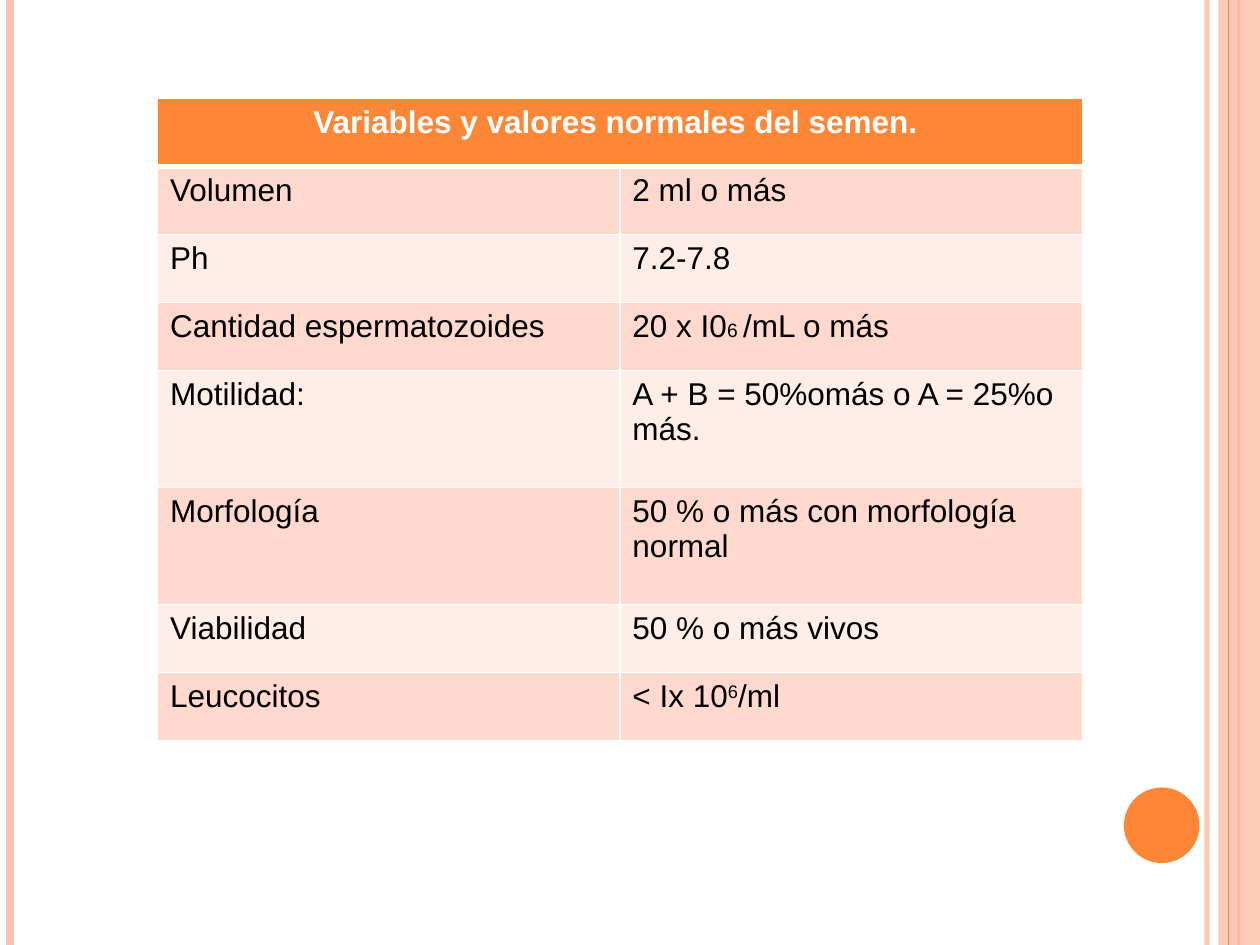
from lxml import etree
from pptx import Presentation
from pptx import util as u
from pptx.dml.color import RGBColor
from pptx.enum import shapes, text
from pptx.oxml import ns

COLORS = {
    "orange": "FE8637",
    "peach": "FEC3AE",
    "band_dark": "FFD9CE",
    "band_light": "FFEDE8",
    "white": "FFFFFF",
    "black": "000000",
}
SLIDE_HEIGHT = 7.5
TITLE = "Variables y valores normales del semen. "

# Each value is a list of (text, format) runs
ROWS = [
    ("Volumen", [("2 ml o más", {})]),
    ("Ph", [("7.2-7.8", {})]),
    ("Cantidad espermatozoides",
     [("20 x I0", {}), ("6 ", {"size": 11}), ("/mL o más", {})]),
    ("Motilidad:", [("A + B = 50%omás o A = 25%o más.", {})]),
    ("Morfología", [("50 % o más con morfología normal", {})]),
    ("Viabilidad", [("50 % o más vivos", {})]),
    ("Leucocitos", [("< Ix 10", {}), ("6", {"baseline": 30}), ("/ml", {})]),
]
TALL_ROWS = (4, 5)


def rgb(name):
    return RGBColor.from_string(COLORS[name])


def add_alpha(element, percent):
    color = element.find(".//" + ns.qn("a:srgbClr"))
    etree.SubElement(color, ns.qn("a:alpha"), val=str(percent * 1000))


def add_text(paragraph, content, size=18, color="black", bold=False, baseline=0):
    run = paragraph.add_run()
    run.text = content
    run.font.name = "Arial"
    run.font.size = u.Pt(size)
    run.font.bold = bold
    run.font.color.rgb = rgb(color)
    if baseline:
        run.font._element.set("baseline", str(baseline * 1000))


def add_vertical_line(slide, x, color, width, alpha=None):
    line = slide.shapes.add_connector(
        shapes.MSO_CONNECTOR.STRAIGHT,
        u.Inches(x), u.Inches(0), u.Inches(x), u.Inches(SLIDE_HEIGHT))
    line.line.color.rgb = rgb(color)
    line.line.width = u.Pt(width)
    properties = line._element.spPr
    if alpha:
        add_alpha(properties, alpha)
    etree.SubElement(properties, ns.qn("a:effectLst"))


def add_plain_shape(slide, kind, left, top, width, height, color, alpha=None):
    shape = slide.shapes.add_shape(
        kind, u.Inches(left), u.Inches(top), u.Inches(width), u.Inches(height))
    shape.shadow.inherit = False
    shape.fill.solid()
    shape.fill.fore_color.rgb = rgb(color)
    shape.line.fill.background()
    if alpha:
        add_alpha(shape._element.spPr, alpha)


def style_cell(cell, color, top=1, bottom=1):
    cell.fill.solid()
    cell.fill.fore_color.rgb = rgb(color)
    properties = cell._tc.get_or_add_tcPr()
    borders = (("L", 1), ("R", 1), ("T", top), ("B", bottom))
    for index, (side, width) in enumerate(borders):
        border = etree.Element(ns.qn(f"a:ln{side}"), w=str(u.Pt(width)))
        fill = etree.SubElement(border, ns.qn("a:solidFill"))
        etree.SubElement(fill, ns.qn("a:srgbClr"), val=COLORS["white"])
        properties.insert(index, border)


def add_values_table(slide):
    table = slide.shapes.add_table(
        len(ROWS) + 1, 2, u.Inches(1.25), u.Inches(0.78),
        u.Inches(7.34), u.Inches(5.08)).table
    for index, row in enumerate(table.rows):
        row.height = u.Inches(0.93 if index in TALL_ROWS else 0.54)

    # Header across both columns
    header = table.cell(0, 0)
    header.merge(table.cell(0, 1))
    for cell in table.rows[0].cells:
        style_cell(cell, "orange", bottom=3)
    paragraph = header.text_frame.paragraphs[0]
    paragraph.alignment = text.PP_ALIGN.CENTER
    add_text(paragraph, TITLE, color="white", bold=True)

    # Banded body rows
    for index, (variable, value) in enumerate(ROWS, start=1):
        band = "band_dark" if index % 2 else "band_light"
        for column, runs in enumerate(([(variable, {})], value)):
            cell = table.cell(index, column)
            style_cell(cell, band, top=3 if index == 1 else 1)
            for content, style in runs:
                add_text(cell.text_frame.paragraphs[0], content, **style)


def main():
    presentation = Presentation()
    presentation.slide_width = u.Inches(10)
    presentation.slide_height = u.Inches(SLIDE_HEIGHT)
    slide = presentation.slides.add_slide(presentation.slide_layouts[6])

    # Side stripes and circle
    add_vertical_line(slide, 9.58, "peach", 3, alpha=93)
    add_vertical_line(slide, 0.08, "peach", 4.5)
    add_vertical_line(slide, 9.83, "orange", 1.5)
    add_plain_shape(slide, shapes.MSO_SHAPE.RECTANGLE,
                    9.67, 0, 0.33, SLIDE_HEIGHT, "peach", alpha=87)
    add_vertical_line(slide, 9.75, "orange", 0.75)
    add_plain_shape(slide, shapes.MSO_SHAPE.OVAL, 8.92, 6.25, 0.6, 0.6, "orange")

    add_values_table(slide)
    presentation.save("out.pptx")


if __name__ == "__main__":
    main()
